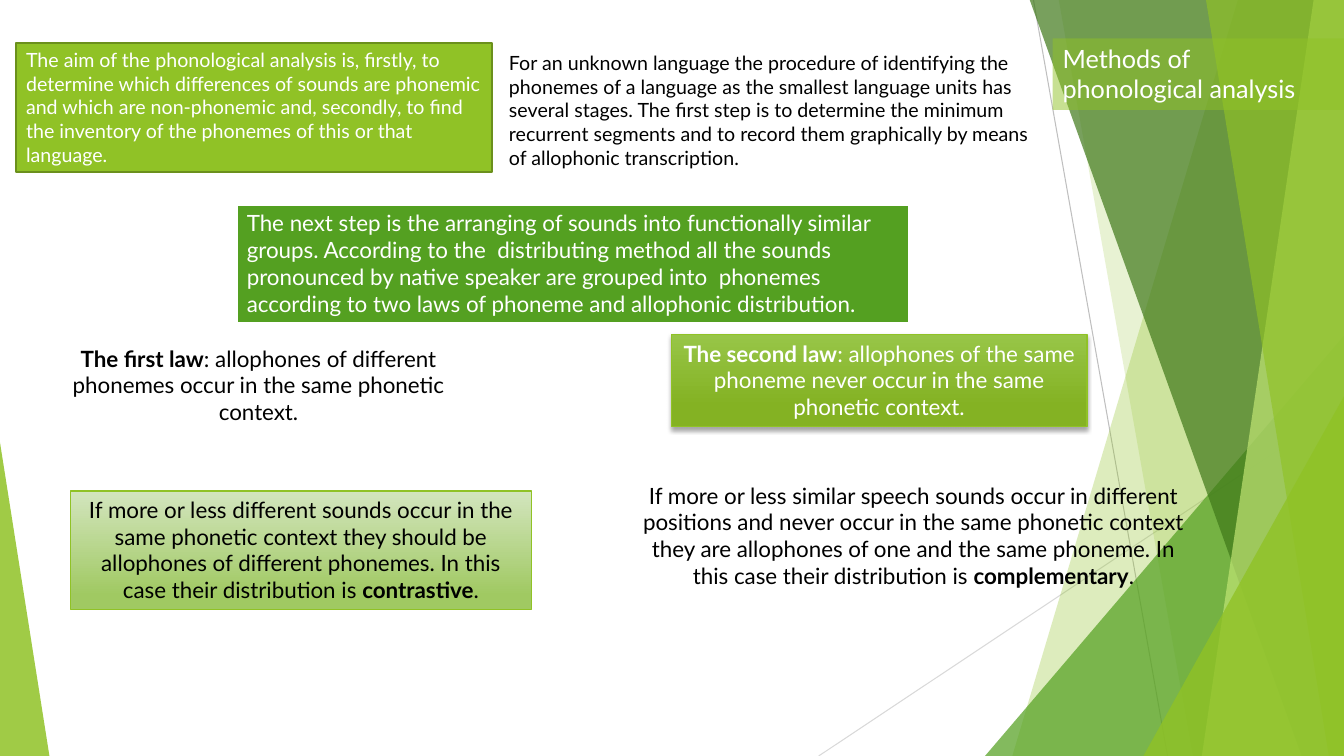
from lxml import etree
from pptx import Presentation
from pptx import util as u
from pptx.dml.color import RGBColor
from pptx.enum import shapes, text
from pptx.oxml.ns import qn

SCALE = 9144
WIDTH, HEIGHT = 1333, 750
COLORS = {
    "white": "FFFFFF", "black": "000000", "lime": "90C226", "olive": "6B901C",
    "green": "54A021", "forest": "3F7819", "pale": "C0E474", "gray": "BFBFBF",
    "silver": "D9D9D9", "leaf": "97C547", "moss": "84B223", "mist": "D3E5BE",
    "sage": "A0C962",
}


class Deck:
    def __init__(self, font):
        self.font = font
        self.show = Presentation()
        self.show.slide_width = self.px(WIDTH)
        self.show.slide_height = self.px(HEIGHT)
        self.slide = self.show.slides.add_slide(self.show.slide_layouts[6])
        self.items = self.slide.shapes

    def px(self, size):
        return u.Emu(size * SCALE)

    def rgb(self, name):
        return RGBColor.from_string(COLORS[name])

    def fade(self, tone, alpha):
        etree.SubElement(tone, qn("a:alpha"), val=str(alpha * 1000))

    def paint(self, shape, color, alpha=100):
        shape.shadow.inherit = False
        shape.fill.solid()
        shape.fill.fore_color.rgb = self.rgb(color)
        if alpha < 100:
            self.fade(shape._element.spPr.find(qn("a:solidFill"))[0], alpha)

    def edge(self, shape, color=None, width=1):
        if color:
            shape.line.color.rgb = self.rgb(color)
            shape.line.width = u.Pt(width)
        else:
            shape.line.fill.background()

    def blend(self, shape, top, base, stop):
        shape.shadow.inherit = False
        shape.fill.gradient()
        shape.fill.gradient_angle = 270
        for mark, color, place in zip(shape.fill.gradient_stops, (top, base), (0, stop)):
            mark.color.rgb = self.rgb(color)
            mark.position = place

    def shade(self, shape, alpha, blur, gap):
        effect = shape._element.spPr.find(qn("a:effectLst"))
        outer = etree.SubElement(
            effect, qn("a:outerShdw"), blurRad=str(int(u.Pt(blur))),
            dist=str(int(u.Pt(gap))), dir="5400000", rotWithShape="0")
        self.fade(etree.SubElement(outer, qn("a:srgbClr"), val=COLORS["black"]), alpha)

    def line(self, start, end, color):
        rule = self.items.add_connector(
            shapes.MSO_CONNECTOR.STRAIGHT, *map(self.px, start + end))
        self.edge(rule, color, 0.75)
        etree.SubElement(rule._element.spPr, qn("a:effectLst"))

    def facet(self, left, right, foot, color, alpha):
        pen = self.items.build_freeform(left, -1, SCALE)
        pen.add_line_segments([(right, -1), (right, HEIGHT), (foot, HEIGHT)], close=True)
        shape = pen.convert_to_shape()
        self.paint(shape, color, alpha)
        self.edge(shape)

    def wedge(self, box, peak, color, alpha):
        shape = self.items.add_shape(
            shapes.MSO_SHAPE.ISOSCELES_TRIANGLE, *map(self.px, box))
        shape.adjustments[0] = peak
        self.paint(shape, color, alpha)
        self.edge(shape)

    def panel(self, box):
        return self.items.add_shape(shapes.MSO_SHAPE.RECTANGLE, *map(self.px, box))

    def note(self, box):
        return self.items.add_textbox(*map(self.px, box))

    def label(self, shape, words, size, color="black", center=False):
        frame = shape.text_frame
        frame.word_wrap = True
        frame.vertical_anchor = text.MSO_ANCHOR.TOP
        para = frame.paragraphs[0]
        para.alignment = text.PP_ALIGN.CENTER if center else text.PP_ALIGN.LEFT
        para.font.name = self.font
        para.font.size = u.Pt(size)
        para.font.color.rgb = self.rgb(color)
        for spot, part in enumerate(words.split("*")):
            if part:
                run = para.add_run()
                run.text = part
                if spot % 2:
                    run.font.bold = True


def main():
    deck = Deck("Lato")

    deck.line((1025, 0), (1158, HEIGHT), "gray")
    deck.line((WIDTH, 403), (812, HEIGHT), "silver")
    deck.facet(1228, WIDTH, 1004, "lime", 30)
    deck.facet(1050, WIDTH, 1183, "lime", 20)
    deck.wedge((977, 333, 356, 417), 1, "green", 72)
    deck.facet(1021, WIDTH, 1291, "forest", 70)
    deck.facet(1303, WIDTH, 1192, "pale", 70)
    deck.facet(1196, WIDTH, 1318, "lime", 65)
    deck.wedge((1134, 393, 199, 357), 1, "lime", 80)
    deck.wedge((0, 439, 49, 311), 0, "lime", 85)

    title = deck.panel((1044, 38, 289, 71))
    deck.paint(title, "lime", 50)
    deck.edge(title)
    deck.label(title, "Methods of phonological analysis", 18, "white")

    aim = deck.panel((16, 43, 472, 128))
    deck.paint(aim, "lime")
    deck.edge(aim, "olive", 1.5)
    deck.label(aim, "The aim of the phonological analysis is, firstly, to determine which "
               "differences of sounds are phonemic and which are non-phonemic and, secondly, "
               "to find the inventory of the phonemes of this or that language.", 14, "white")

    deck.label(deck.note((495, 46, 543, 128)),
               "For an unknown language the procedure of identifying the phonemes of a "
               "language as the smallest language units has several stages. The first step is "
               "to determine the minimum recurrent segments and to record them graphically "
               "by means of allophonic transcription.", 14)

    deck.label(deck.note((624, 473, 564, 145)),
               "If more or less similar speech sounds occur in different positions and never "
               "occur in the same phonetic context they are allophones of one and the same "
               "phoneme. In this case their distribution is *complementary*.", 16, center=True)

    step = deck.panel((235, 203, 667, 118))
    deck.paint(step, "green")
    deck.edge(step, "white", 2)
    deck.label(step, "The next step is the arranging of sounds into functionally similar "
               "groups. According to the  distributing method all the sounds pronounced by "
               "native speaker are grouped into  phonemes according to two laws of phoneme "
               "and allophonic distribution.", 16, "white")

    deck.label(deck.note((25, 337, 463, 91)),
               "*The first law*: allophones of different phonemes occur in the same "
               "phonetic context.", 16, center=True)

    second = deck.panel((666, 332, 412, 91))
    deck.blend(second, "leaf", "moss", 0.78)
    deck.edge(second, "lime")
    deck.shade(second, 35, 3, 2)
    deck.label(second, "*The second law*: allophones of the same phoneme never occur in the "
               "same phonetic context.", 16, "white", center=True)

    contrast = deck.panel((70, 487, 457, 118))
    deck.blend(contrast, "mist", "sage", 0.88)
    deck.edge(contrast, "lime")
    deck.label(contrast, "If more or less different sounds occur in the same phonetic context "
               "they should be allophones of different phonemes. In this case their "
               "distribution is *contrastive*.", 16, center=True)

    deck.show.save("out.pptx")


if __name__ == "__main__":
    main()
